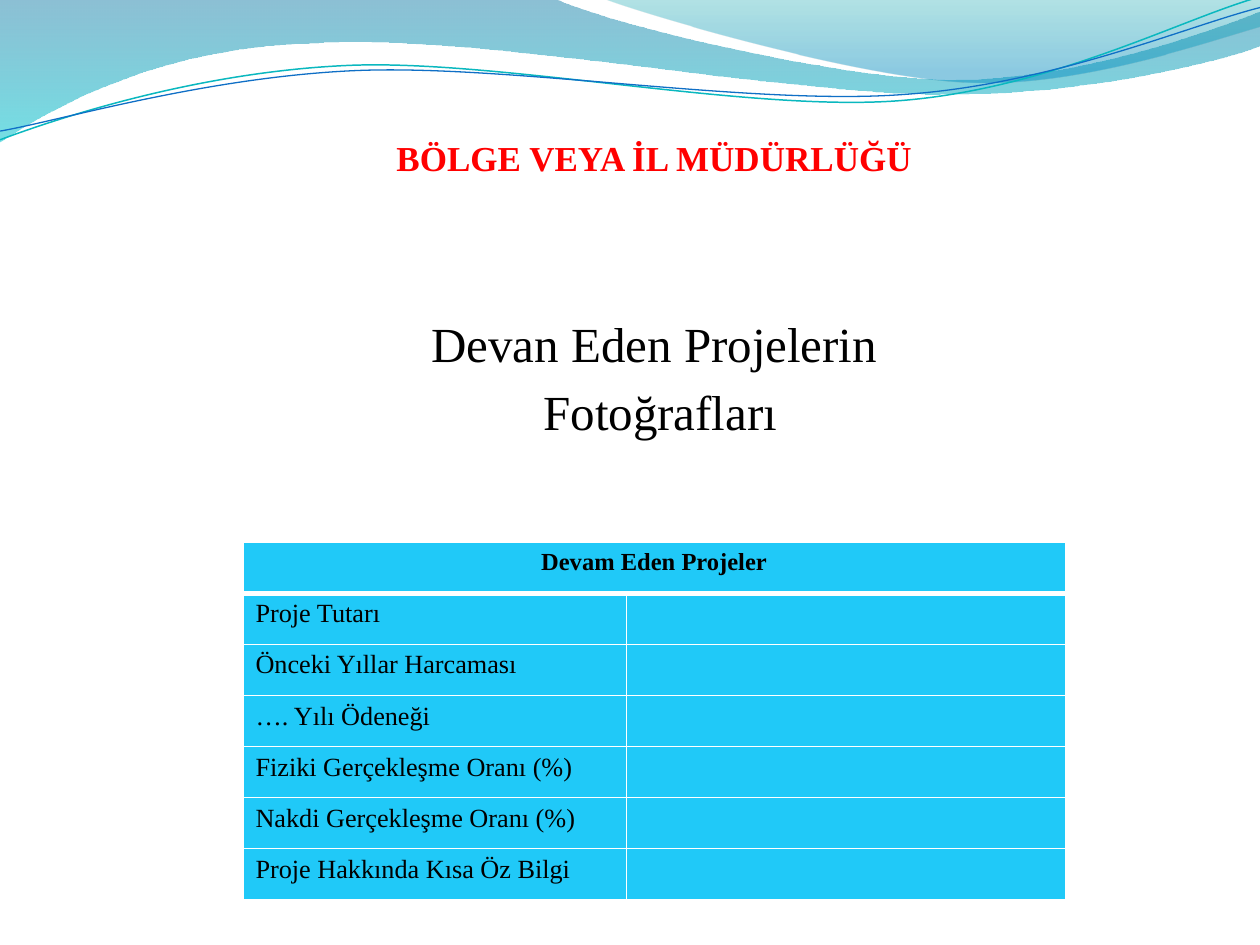
"""Build the slide on ongoing projects of a regional directorate."""
from dataclasses import dataclass

from lxml import etree
from pptx import Presentation
from pptx.dml.color import RGBColor
from pptx.enum.text import MSO_ANCHOR, PP_ALIGN
from pptx.oxml.ns import qn
from pptx.util import Pt

CENTER, LEFT = PP_ALIGN.CENTER, PP_ALIGN.LEFT
MIDDLE = MSO_ANCHOR.MIDDLE


@dataclass(frozen=True)
class Theme:
    font: str = "Times New Roman"
    title: str = "FF0000"
    text: str = "000000"
    cell: str = "20C9F8"
    border: str = "FFFFFF"
    teal_line: str = "0AB8BF"
    blue_line: str = "0F6FC6"
    wide_wave: tuple = ((0, "0074A1", 45), (1, "00C6CF", 55))
    right_wave: tuple = ((0, "00A1A9", 30), (0.8, "008BBF", 45))
    title_size: int = 20
    body_size: int = 28
    header_size: int = 14
    cell_size: int = 15


class SlideBuilder:
    def __init__(self, slide, theme):
        self.slide = slide
        self.theme = theme

    def outline(self, start, segments, close):
        """Draw segments of two numbers as lines and of six as Bézier curves."""
        builder = self.slide.shapes.build_freeform(Pt(start[0]), Pt(start[1]))
        builder.add_line_segments(
            [(Pt(x), Pt(y)) for segment in segments
             for x, y in zip(segment[::2], segment[1::2])], close=close)
        shape = builder.convert_to_shape()
        shape.shadow.inherit = False
        lines = iter(list(shape.element.iter(qn("a:lnTo"))))
        for segment in segments:
            first = next(lines)
            if len(segment) == 6:
                first.tag = qn("a:cubicBezTo")
                for line in (next(lines), next(lines)):
                    first.append(line[0])
                    line.getparent().remove(line)
        return shape

    def wave(self, start, segments, stops):
        shape = self.outline(start, segments, True)
        shape.line.fill.background()
        shape.fill.gradient()
        shape.fill.gradient_angle = 270
        for stop, (position, color, _) in zip(shape.fill.gradient_stops, stops):
            stop.position = position
            stop.color.rgb = RGBColor.from_string(color)
        for element, (_, _, opacity) in zip(shape.element.iter(qn("a:srgbClr")), stops):
            etree.SubElement(element, qn("a:alpha"), val=str(opacity * 1000))

    def curve(self, start, segments, color, width):
        shape = self.outline(start, segments, False)
        shape.fill.background()
        shape.line.color.rgb = RGBColor.from_string(color)
        shape.line.width = Pt(width)

    def style(self, paragraph, size, color, bold=False, alignment=CENTER):
        paragraph.alignment = alignment
        font = paragraph.font
        font.name, font.size, font.bold = self.theme.font, Pt(size), bold
        font.color.rgb = RGBColor.from_string(color)

    def text(self, box, lines, size, color, bold=False, before=0, margins=(7.2, 3.6, 7.2, 3.6)):
        frame = self.slide.shapes.add_textbox(*map(Pt, box)).text_frame
        frame.word_wrap = True
        frame.vertical_anchor = MIDDLE
        (frame.margin_left, frame.margin_top,
         frame.margin_right, frame.margin_bottom) = map(Pt, margins)
        frame.text = "\n".join(lines)
        for paragraph in frame.paragraphs:
            self.style(paragraph, size, color, bold)
            paragraph.space_before = Pt(before)

    def borders(self, cell, widths):
        properties = cell._tc.get_or_add_tcPr()
        for side, width in widths.items():
            line = etree.SubElement(properties, qn(f"a:ln{side}"), w=str(Pt(width)))
            fill = etree.SubElement(line, qn("a:solidFill"))
            etree.SubElement(fill, qn("a:srgbClr"), val=self.theme.border)

    def table(self, box, column_widths, header, labels):
        theme = self.theme
        table = self.slide.shapes.add_table(
            len(labels) + 1, len(column_widths), *map(Pt, box)).table
        for column, width in zip(table.columns, column_widths):
            column.width = Pt(width)
        for index, (row, label) in enumerate(zip(table.rows, [header, *labels])):
            row.height = Pt(box[3] / (len(labels) + 1))
            row.cells[0].text = label
            is_header = index == 0
            for cell in row.cells:
                self.borders(cell, {"L": 1, "R": 1, "T": 3 if index == 1 else 1,
                                    "B": 3 if is_header else 1})
                cell.fill.solid()
                cell.fill.fore_color.rgb = RGBColor.from_string(theme.cell)
                self.style(cell.text_frame.paragraphs[0],
                           theme.header_size if is_header else theme.cell_size,
                           theme.text, is_header, CENTER if is_header else LEFT)
        table.cell(0, 0).merge(table.cell(0, len(column_widths) - 1))


def main():
    presentation = Presentation()
    presentation.slide_width, presentation.slide_height = Pt(720), Pt(540)
    theme = Theme()
    builder = SlideBuilder(
        presentation.slides.add_slide(presentation.slide_layouts[6]), theme)

    builder.wave((0, 0), [
        (317, -0.7), (342.7, 12.2, 478, 45.4, 546, 45.4), (614, 45.4, 690, 18.7, 720, 6.5),
        (720.7, 26), (708, 31.7, 626, 54.7, 537, 54), (448, 54, 275, 20.2, 185, 24.5),
        (93, 26, 33, 59.8, -0.7, 81.4)], theme.wide_wave)
    builder.wave((345, -0.7), [
        (366.5, 7.9, 491, 44.6, 553.7, 46.8), (616.3, 49.7, 692, 23, 720, 15.1), (720, 0)],
        theme.right_wave)
    builder.curve((0, 79.9), [
        (34.6, 67, 113.8, 41, 199.4, 37.4), (284.4, 33.8, 427, 64.1, 513.4, 57.6),
        (599.8, 51.1, 675.4, 10.8, 718.6, -1.4)], theme.teal_line, 0.85)
    builder.curve((0, 74.9), [
        (33.8, 69.1, 118.1, 43.9, 203.8, 40.3), (290.2, 36.7, 429.8, 60.5, 516.2, 54),
        (601.9, 48.2, 677.5, 15.1, 720, 4.3)], theme.blue_line, 0.75)

    left, width = 138.8, 470
    builder.text((left, 66, width, 45), ["BÖLGE VEYA İL MÜDÜRLÜĞÜ"],
                 theme.title_size, theme.title, bold=True, margins=(0, 3.6, 0, 0))
    builder.table((left, 309.8, width, 204.4), (219.3, 250.7), "Devam Eden Projeler", [
        "Proje Tutarı", "Önceki Yıllar Harcaması", "…. Yılı Ödeneği",
        "Fiziki Gerçekleşme Oranı (%)", "Nakdi Gerçekleşme Oranı (%)",
        "Proje Hakkında Kısa Öz Bilgi"])
    builder.text((left, 157, width, 147.5), ["Devan Eden Projelerin", " Fotoğrafları"],
                 theme.body_size, theme.text, before=5.4, margins=(7.2, 3.6, 7.2, 34.3))
    presentation.save("out.pptx")


if __name__ == "__main__":
    main()
